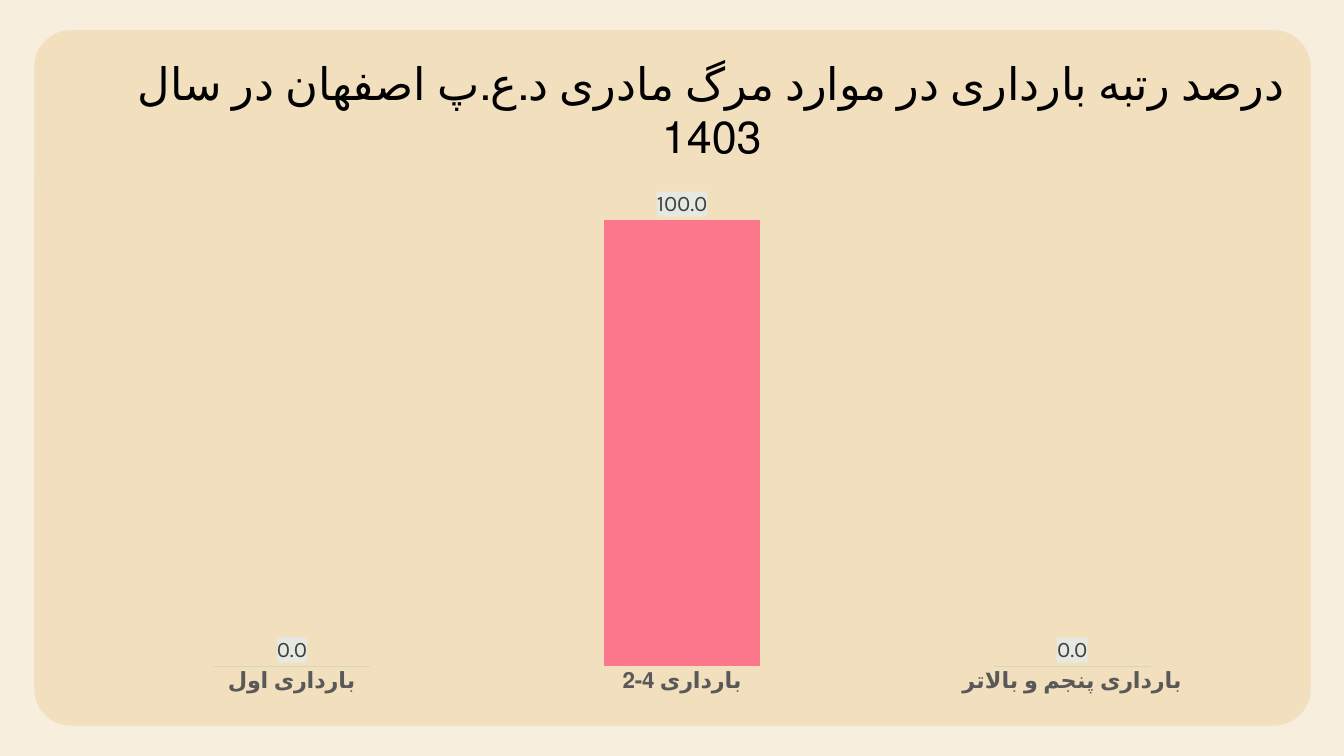
from dataclasses import dataclass

from lxml.etree import SubElement
from pptx import Presentation
from pptx.chart.chart import Chart
from pptx.chart.data import CategoryChartData
from pptx.dml.color import RGBColor as Rgb
from pptx.enum.chart import XL_CHART_TYPE as ChartType
from pptx.enum.chart import XL_LABEL_POSITION as LabelPosition
from pptx.enum.chart import XL_TICK_LABEL_POSITION as TickLabels
from pptx.enum.chart import XL_TICK_MARK as TickMark
from pptx.enum.shapes import MSO_SHAPE as Preset
from pptx.enum.text import PP_ALIGN as Align
from pptx.oxml import parse_xml
from pptx.oxml.ns import nsdecls, qn
from pptx.slide import Slide
from pptx.text.text import Font
from pptx.util import Inches, Pt


@dataclass(frozen=True)
class Theme:
    page: str = "F7EEDD"
    card: str = "F2DFBE"
    title: str = "000000"
    category: str = "595959"
    value: str = "404040"
    value_back: str = "E6E9E2"
    title_font: str = "Times New Roman"
    chart_font: str = "Karla"
    title_size: int = 32
    chart_size: int = 16


@dataclass(frozen=True)
class Area:
    left: float
    top: float
    width: float
    height: float

    def lengths(self) -> list[Inches]:
        return [Inches(n) for n in (self.left, self.top, self.width, self.height)]


@dataclass(frozen=True)
class Bar:
    label: str
    percent: float
    color: str


THEME = Theme()
CARD = Area(0.34, 0.3, 12.66, 6.9)
TITLE = Area(1.15, 0.5, 11.82, 0.94)
CHART = Area(0.72, 1.9, 12.09, 5.06)
PLOT = Area(0.96, 2.15, 11.61, 4.46)
TITLE_TEXT = "درصد رتبه بارداری در موارد مرگ مادری د.ع.پ اصفهان در سال 1403"
BARS = [
    Bar("بارداری اول", 0, "00B050"),
    Bar("بارداری 4-2", 100, "FB778B"),
    Bar("بارداری پنجم و بالاتر", 0, "00B050"),
]


def style_font(font: Font, name: str, size: int, color: str, bold: bool = False) -> None:
    font.name, font.size, font.bold = name, Pt(size), bold
    font.color.rgb = Rgb.from_string(color)


def add_card(page: Slide) -> None:
    card = page.shapes.add_shape(Preset.ROUNDED_RECTANGLE, *CARD.lengths())
    card.adjustments[0] = 0.053
    card.shadow.inherit = False
    card.fill.solid()
    card.fill.fore_color.rgb = Rgb.from_string(THEME.card)
    card.line.fill.background()


def add_title(page: Slide) -> None:
    frame = page.shapes.add_textbox(*TITLE.lengths()).text_frame
    frame.word_wrap = True
    para = frame.paragraphs[0]
    para.alignment = Align.CENTER
    para._p.get_or_add_pPr().set("rtl", "1")
    span = para.add_run()
    span.text = TITLE_TEXT
    style_font(span.font, THEME.title_font, THEME.title_size, THEME.title)
    span._r.get_or_add_rPr().set("lang", "fa-IR")


def place_plot(chart: Chart) -> None:
    """Fix the inner plot area as fractions of the chart frame."""
    plot_area = chart._chartSpace.chart.plotArea
    for old in plot_area.findall(qn("c:layout")):
        plot_area.remove(old)
    layout = parse_xml(f"<c:layout {nsdecls('c')}/>")
    manual = SubElement(layout, qn("c:manualLayout"))
    settings = {
        "layoutTarget": "inner",
        "xMode": "edge",
        "yMode": "edge",
        "x": (PLOT.left - CHART.left) / CHART.width,
        "y": (PLOT.top - CHART.top) / CHART.height,
        "w": PLOT.width / CHART.width,
        "h": PLOT.height / CHART.height,
    }
    for tag, setting in settings.items():
        SubElement(manual, qn(f"c:{tag}")).set("val", str(setting))
    plot_area.insert(0, layout)


def style_axes(chart: Chart) -> None:
    categories, values = chart.category_axis, chart.value_axis
    categories.major_tick_mark = TickMark.NONE
    categories.minor_tick_mark = TickMark.NONE
    categories.tick_label_position = TickLabels.NEXT_TO_AXIS
    categories.format.line.fill.background()
    style_font(categories.tick_labels.font, THEME.chart_font, THEME.chart_size,
               THEME.category, bold=True)
    categories.tick_labels.offset = 0
    values.minimum_scale, values.maximum_scale = 0, 100
    values.has_major_gridlines = False
    values.visible = False


def style_labels(chart: Chart) -> None:
    labels = chart.plots[0].series[0].data_labels
    labels.show_value = True
    labels.number_format, labels.number_format_is_linked = "0.0", False
    labels.position = LabelPosition.OUTSIDE_END
    style_font(labels.font, THEME.chart_font, THEME.chart_size, THEME.value)
    back = parse_xml(
        f'<c:spPr {nsdecls("c", "a")}><a:solidFill>'
        f'<a:srgbClr val="{THEME.value_back}"/></a:solidFill></c:spPr>')
    labels._element.find(qn("c:txPr")).addprevious(back)


def add_bar_chart(page: Slide) -> None:
    data = CategoryChartData(number_format="0.0")
    data.categories = [bar.label for bar in BARS]
    data.add_series("Series 1", [bar.percent for bar in BARS])
    chart = page.shapes.add_chart(
        ChartType.COLUMN_CLUSTERED, *CHART.lengths(), data).chart
    chart.has_title = chart.has_legend = False
    style_font(chart.font, THEME.chart_font, THEME.chart_size, THEME.title)
    plot = chart.plots[0]
    plot.gap_width = 150
    plot.vary_by_categories = False
    for index, bar in enumerate(BARS):
        fill = plot.series[0].points[index].format.fill
        fill.solid()
        fill.fore_color.rgb = Rgb.from_string(bar.color)
    style_axes(chart)
    style_labels(chart)
    place_plot(chart)


def main() -> None:
    deck = Presentation()
    deck.slide_width, deck.slide_height = Inches(13.33), Inches(7.5)
    page = deck.slides.add_slide(deck.slide_layouts[6])
    page.background.fill.solid()
    page.background.fill.fore_color.rgb = Rgb.from_string(THEME.page)
    add_card(page)
    add_title(page)
    add_bar_chart(page)
    deck.save("out.pptx")


if __name__ == "__main__":
    main()
